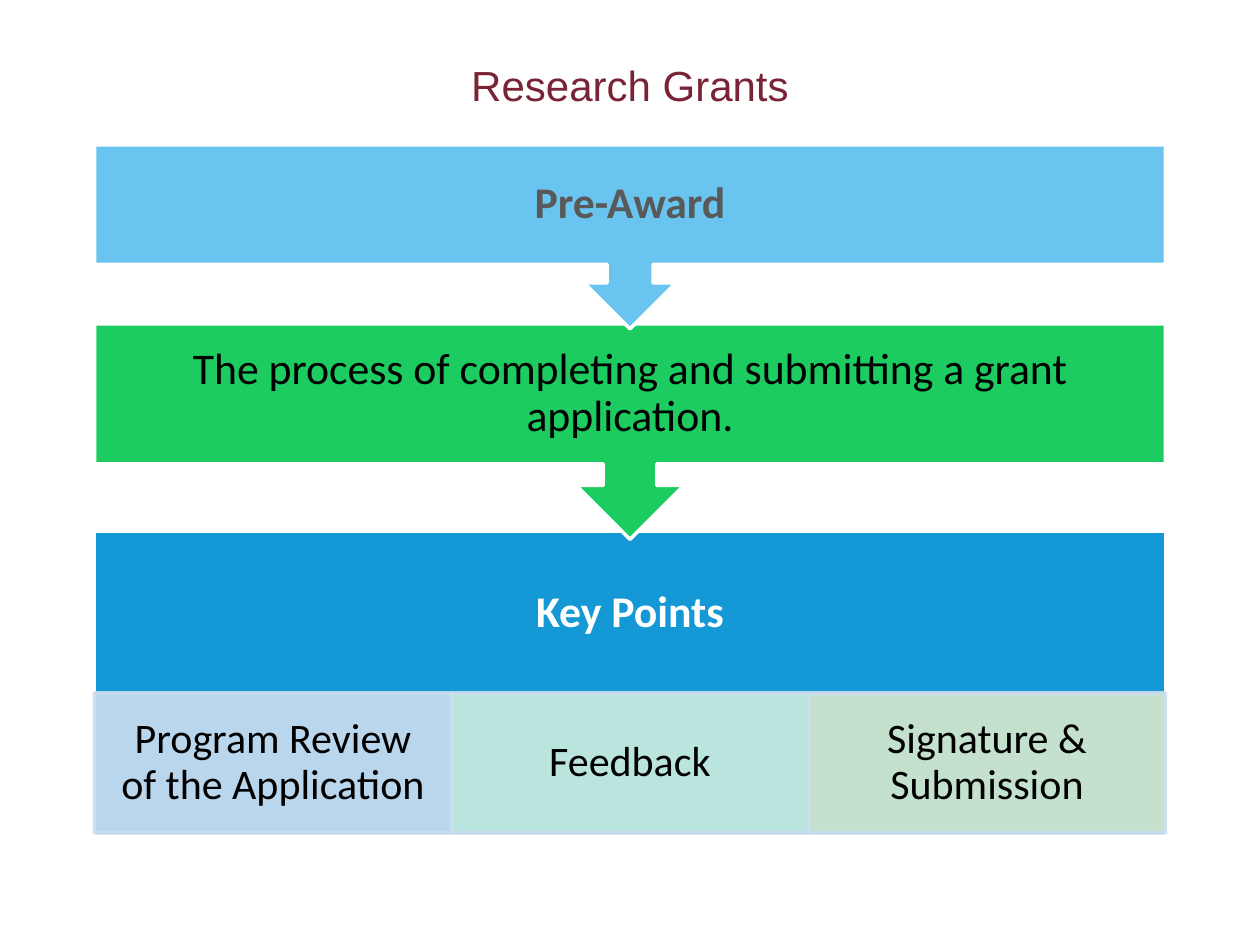
from lxml import etree
from pptx import Presentation
from pptx.dml.color import RGBColor
from pptx.enum.shapes import MSO_SHAPE
from pptx.enum.text import MSO_ANCHOR, PP_ALIGN
from pptx.oxml.ns import qn
from pptx.util import Inches, Pt

RECT = MSO_SHAPE.RECTANGLE
CALLOUT = MSO_SHAPE.UP_ARROW_CALLOUT
TOP, MIDDLE = MSO_ANCHOR.TOP, MSO_ANCHOR.MIDDLE
CENTER = PP_ALIGN.CENTER

COLORS = {
    "title": "782336", "white": "FFFFFF", "black": "000000", "gray": "595959",
    "sky": "69C5F0", "green": "1DCC60", "blue": "1598D6",
    "pale_blue": "CCDDF0", "pale_teal": "CDEDDF", "pale_green": "D7E9CD",
}
LEFT, WIDTH = 0.75, 8.5
POINTS_TOP, POINTS_HEIGHT = 5.5, 1.11
POINTS = [
    ("Program Review of the Application", "pale_blue"),
    ("Feedback", "pale_teal"),
    ("Signature & Submission", "pale_green"),
]


def rgb(name):
    return RGBColor.from_string(COLORS[name])


def set_alpha(fill, percent):
    """Make a solid fill, of a shape or a line, partly transparent."""
    color = fill._xPr.find(qn("a:solidFill"))[0]
    etree.SubElement(color, qn("a:alpha")).set("val", str(percent * 1000))


def add_block(slide, kind, box, fill, line="white", alpha=None):
    sp = slide.shapes.add_shape(kind, *map(Inches, box))
    sp.shadow.inherit = False
    sp.fill.solid()
    sp.fill.fore_color.rgb = rgb(fill)
    sp.line.color.rgb = rgb(line)
    sp.line.width = Pt(2)
    if alpha:
        set_alpha(sp.fill, alpha)
        set_alpha(sp.line.fill, alpha)
    return sp


def add_text(slide, box, text, color, size=25, bold=False, font="Calibri",
             anchor=MIDDLE, margins=(0.19, 0.19), spacing=0.9):
    tf = slide.shapes.add_textbox(*map(Inches, box)).text_frame
    tf.word_wrap = True
    tf.vertical_anchor = anchor
    tf.margin_left = tf.margin_right = Inches(margins[0])
    tf.margin_top = tf.margin_bottom = Inches(margins[1])
    p = tf.paragraphs[0]
    p.text = text
    p.alignment = CENTER
    p.line_spacing = spacing
    p.font.name = font
    p.font.size = Pt(size)
    p.font.bold = bold
    p.font.color.rgb = rgb(color)


def add_step(slide, top, height, text_height, fill, text, color, bold=False):
    """A full-width band with an arrow pointing down to the next one."""
    sp = add_block(slide, CALLOUT, (LEFT, top, WIDTH, height), fill)
    sp.rotation = 180
    add_text(slide, (LEFT, top, WIDTH, text_height), text, color, bold=bold)


def add_key_points(slide):
    add_block(slide, RECT, (LEFT, 4.22, WIDTH, 2.41), "blue")
    add_text(slide, (LEFT, 4.22, WIDTH, 1.3), "Key Points", "white", bold=True)
    width = WIDTH / len(POINTS)
    for i, (text, fill) in enumerate(POINTS):
        box = (LEFT + i * width, POINTS_TOP, width, POINTS_HEIGHT)
        add_block(slide, RECT, box, fill, line="pale_blue", alpha=90)
        add_text(slide, box, text, "black", size=24, margins=(0.19, 0.03))


def main():
    prs = Presentation()
    prs.slide_width, prs.slide_height = Inches(10), Inches(7.5)
    slide = prs.slides.add_slide(prs.slide_layouts[6])
    add_text(slide, (LEFT, 0.42, WIDTH, 1.21), "Research Grants", "title", size=24,
             font="Arial", anchor=TOP, margins=(0.1, 0.05), spacing=1.0)
    add_key_points(slide)
    add_step(slide, 2.57, 1.71, 1.11, "green",
             "The process of completing and submitting a grant application.", "black")
    add_step(slide, 1.15, 1.46, 0.95, "sky", "Pre-Award", "gray", bold=True)
    prs.save("out.pptx")


if __name__ == "__main__":
    main()
